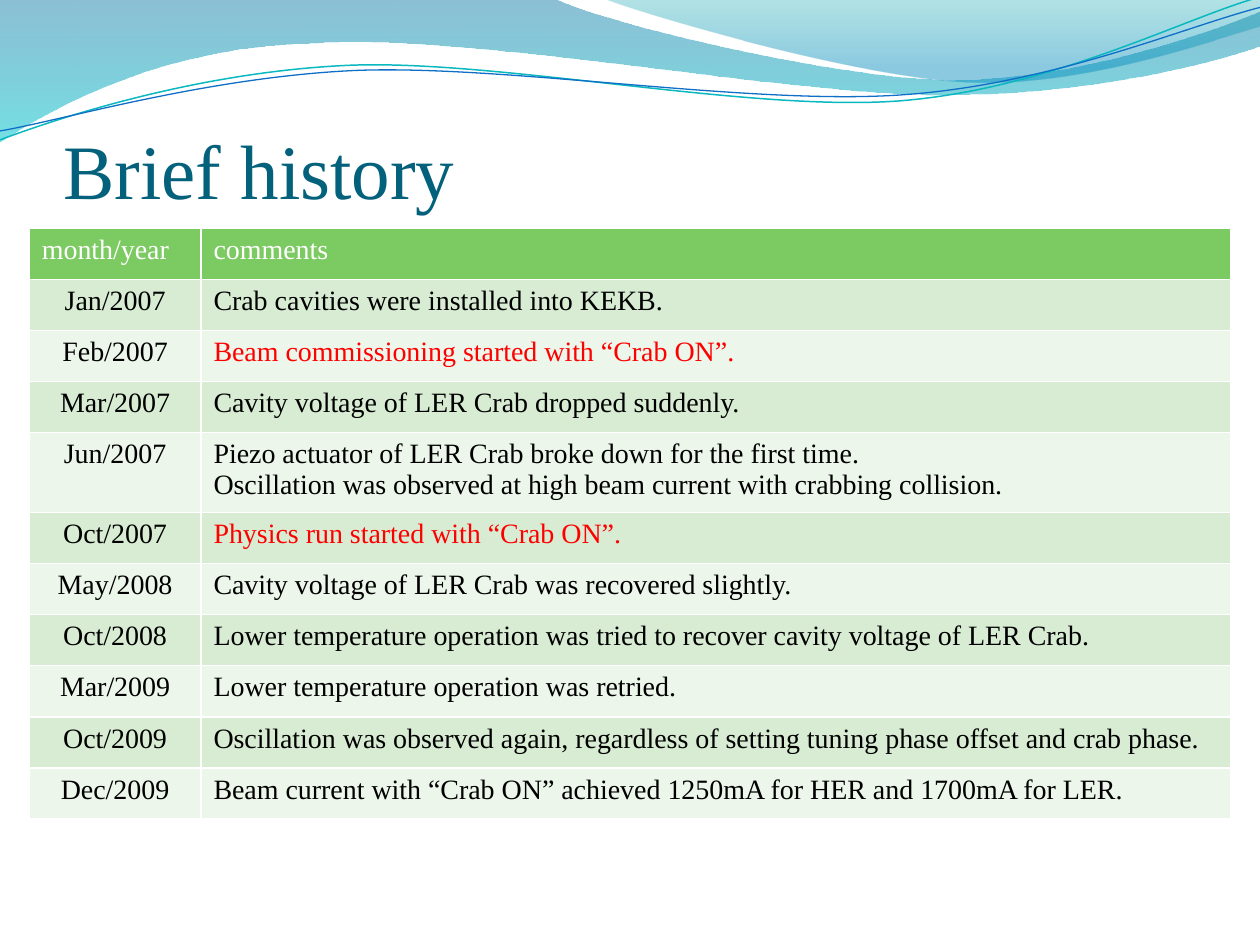
from lxml.etree import SubElement
from pptx import Presentation
from pptx.dml.color import RGBColor
from pptx.enum.text import MSO_ANCHOR, PP_ALIGN
from pptx.oxml.ns import qn
from pptx.util import Cm, Pt

FONT = "Times New Roman"

UPPER_WAVE = [
    [(0, 0)],
    [(11.18, -0.03)],
    [(12.09, 0.43), (16.87, 1.6), (19.25, 1.6)],
    [(21.67, 1.6), (24.33, 0.66), (25.4, 0.23)],
    [(25.43, 0.91)],
    [(24.97, 1.12), (22.1, 1.93), (18.95, 1.91)],
    [(15.8, 1.91), (9.7, 0.71), (6.53, 0.86)],
    [(3.28, 0.91), (1.17, 2.11), (-0.03, 2.87)],
    [(0, 0)],
]
RIGHT_WAVE = [
    [(12.17, -0.03)],
    [(12.93, 0.28), (17.32, 1.57), (19.53, 1.65)],
    [(21.82, 1.75), (24.41, 0.81), (25.4, 0.53)],
    [(25.4, 0)],
    [(12.17, -0.03)],
]
TEAL_LINE = [
    [(-0.05, 2.22)],
    [(1.19, 1.82), (4.02, 1.04), (7.05, 1.05)],
    [(10.05, 1.07), (15.02, 2.37), (18.08, 2.29)],
    [(21.13, 2.2), (23.87, 0.91), (25.41, 0.55)],
]
BLUE_LINE = [
    [(-0.04, 2.04)],
    [(1.16, 1.9), (4.18, 1.15), (7.2, 1.16)],
    [(10.25, 1.19), (15.13, 2.25), (18.18, 2.17)],
    [(21.21, 2.1), (23.93, 1.06), (25.45, 0.75)],
]

HISTORY = [
    ("month/year", "comments"),
    ("Jan/2007", "Crab cavities were installed into KEKB."),
    ("Feb/2007", "Beam commissioning started with “Crab ON”."),
    ("Mar/2007", "Cavity voltage of LER Crab dropped suddenly."),
    ("Jun/2007", "Piezo actuator of LER Crab broke down for the first time.\n"
     "Oscillation was observed at high beam current with crabbing collision."),
    ("Oct/2007", "Physics run started with “Crab ON”."),
    ("May/2008", "Cavity voltage of LER Crab was recovered slightly."),
    ("Oct/2008", "Lower temperature operation was tried to recover cavity voltage of LER Crab."),
    ("Mar/2009", "Lower temperature operation was retried."),
    ("Oct/2009", "Oscillation was observed again, regardless of setting tuning phase offset and crab phase."),
    ("Dec/2009", "Beam current with “Crab ON” achieved 1250mA for HER and 1700mA for LER."),
]
MILESTONES = ("Feb/2007", "Oct/2007")


def color(hex_string):
    """Return the colour for a hex string."""
    return RGBColor.from_string(hex_string)


def format_text(text_frame, size, hex_string):
    """Give every run of a text frame the slide font, a size and a colour."""
    for paragraph in text_frame.paragraphs:
        for run in paragraph.runs:
            run.font.name = FONT
            run.font.size = Pt(size)
            run.font.bold = False
            run.font.color.rgb = color(hex_string)


def add_outline(slide, left, top, segments, close):
    """Draw straight and cubic segments as a freeform relative to a corner."""
    segments = [[(Cm(left + x), Cm(top + y)) for x, y in segment] for segment in segments]
    anchors = [segment[-1] for segment in segments]
    builder = slide.shapes.build_freeform(*anchors[0], scale=1.0)
    builder.add_line_segments(anchors[1:], close=close)
    shape = builder.convert_to_shape()
    shape.shadow.inherit = False
    lines = list(shape.element.iter(qn("a:lnTo")))
    for line, segment in zip(lines, segments[1:]):
        if len(segment) == 3:
            line.tag = qn("a:cubicBezTo")
            for index, (x, y) in enumerate(segment[:2]):
                control = SubElement(line, qn("a:pt"))
                control.set("x", str(x - shape.left))
                control.set("y", str(y - shape.top))
                line.insert(index, control)
    return shape


def add_wave(slide, left, top, segments, stops):
    """Draw a wave filled with a translucent downward gradient."""
    shape = add_outline(slide, left, top, segments, True)
    shape.line.fill.background()
    shape.fill.gradient()
    shape.fill.gradient_angle = 270
    for gradient_stop, (position, hex_string, _) in zip(shape.fill.gradient_stops, stops):
        gradient_stop.position = position
        gradient_stop.color.rgb = color(hex_string)
    for element, (_, _, opacity) in zip(shape.element.iter(qn("a:srgbClr")), stops):
        SubElement(element, qn("a:alpha")).set("val", str(opacity * 1000))


def add_wave_line(slide, left, top, segments, hex_string, width):
    """Draw an open wavy line with a slight tilt."""
    shape = add_outline(slide, left, top, segments, False)
    shape.rotation = 357.3
    shape.fill.background()
    shape.line.color.rgb = color(hex_string)
    shape.line.width = Pt(width)


def add_header_waves(slide, left, top):
    """Draw the decoration along the top edge."""
    add_wave(slide, left, top, UPPER_WAVE, [(0, "0074A1", 45), (1, "00C6CF", 55)])
    add_wave(slide, left, top, RIGHT_WAVE, [(0, "00A1A9", 30), (0.8, "008BBF", 45)])
    add_wave_line(slide, left, top, TEAL_LINE, "0AB8BF", 0.85)
    add_wave_line(slide, left, top, BLUE_LINE, "0F6FC6", 0.75)


def add_title(slide, left, top, width, height):
    """Place the slide title at the bottom of its box."""
    text_frame = slide.shapes.add_textbox(Cm(left), Cm(top), Cm(width), Cm(height)).text_frame
    text_frame.word_wrap = True
    text_frame.margin_left = text_frame.margin_right = text_frame.margin_bottom = 0
    text_frame.vertical_anchor = MSO_ANCHOR.BOTTOM
    text_frame.text = "Brief history"
    format_text(text_frame, 44, "04617B")


def add_history_table(slide, left, top, width, height):
    """Place the table of dated comments."""
    date_width, row_height, text_size = 3.46, 1.03, 16
    frame = slide.shapes.add_table(
        len(HISTORY), 2, Cm(left), Cm(top), Cm(width), Cm(height)
    )
    table = frame.table
    table.columns[0].width = Cm(date_width)
    table.columns[1].width = Cm(width - date_width)
    for row, entry in enumerate(HISTORY):
        table.rows[row].height = Cm(row_height)
        fill_color = "7CCA62" if row == 0 else ("ECF6EA", "D7ECD3")[row % 2]
        for column, text in enumerate(entry):
            cell = table.cell(row, column)
            cell.fill.solid()
            cell.fill.fore_color.rgb = color(fill_color)
            cell.text_frame.text = text
            text_color = "FFFFFF" if row == 0 else "000000"
            if column == 1 and entry[0] in MILESTONES:
                text_color = "FF0000"
            format_text(cell.text_frame, text_size, text_color)
            if row > 0 and column == 0:
                cell.text_frame.paragraphs[0].alignment = PP_ALIGN.CENTER
            for element in cell.text_frame._txBody.iter(qn("a:p")):
                SubElement(element, qn("a:endParaRPr")).set("sz", str(text_size * 100))
    frame.height = Cm(height)


def main():
    """Build and save the presentation."""
    presentation = Presentation()
    presentation.slide_width = Cm(25.4)
    presentation.slide_height = Cm(19.05)
    slide = presentation.slides.add_slide(presentation.slide_layouts[6])
    add_header_waves(slide, 0, 0)
    add_title(slide, 1.28, 1.95, 20.75, 2.39)
    add_history_table(slide, 0.59, 4.6, 24.22, 11.91)
    presentation.save("out.pptx")


if __name__ == "__main__":
    main()
